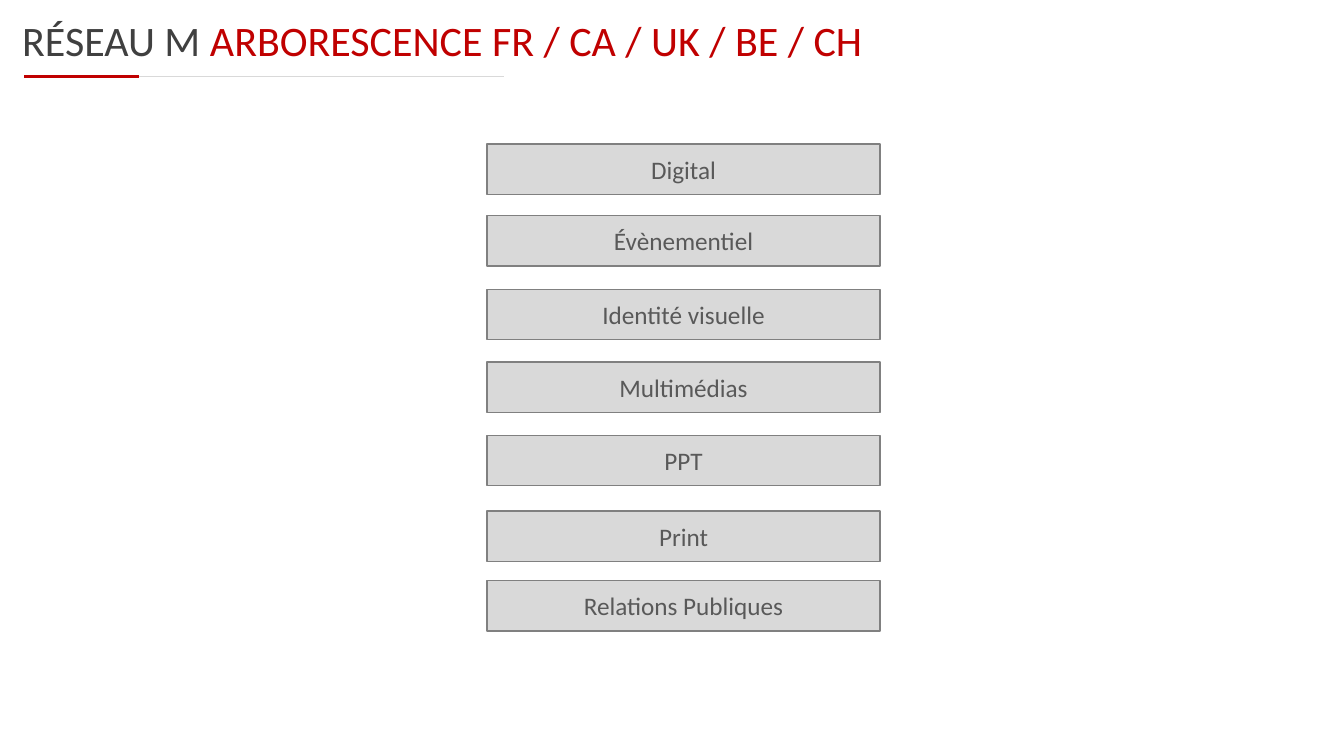
import pptx
import pptx.util
import pptx.dml.color
import pptx.enum.shapes
import pptx.enum.text
import pptx.oxml.ns
import lxml.etree

PX = 9144
COLORS = {
    "red": "C00000",
    "title": "404040",
    "text": "595959",
    "border": "808080",
    "box": "D9D9D9",
}


def rgb(name):
    return pptx.dml.color.RGBColor.from_string(COLORS[name])


prs = pptx.Presentation()
prs.slide_width = 1333 * PX
prs.slide_height = 750 * PX
s = prs.slides.add_slide(prs.slide_layouts[5])

for x1, x2, color, width in [(138, 500, "box", 0.25), (24, 138, "red", 2.5)]:
    rule = s.shapes.add_connector(
        pptx.enum.shapes.MSO_CONNECTOR.STRAIGHT, x1 * PX, 76 * PX, x2 * PX, 76 * PX
    )
    rule.line.color.rgb = rgb(color)
    rule.line.width = pptx.util.Pt(width)
    lxml.etree.SubElement(rule._element.spPr, pptx.oxml.ns.qn("a:effectLst"))

title = s.shapes.title
title.left, title.top, title.width, title.height = 12 * PX, 9 * PX, 1015 * PX, 149 * PX
tf = title.text_frame
tf.word_wrap = True
tf.auto_size = pptx.enum.text.MSO_AUTO_SIZE.NONE
tf.vertical_anchor = pptx.enum.text.MSO_ANCHOR.TOP
p = tf.paragraphs[0]
p.alignment = pptx.enum.text.PP_ALIGN.LEFT
p.font.name = "Calibri"
p.font.size = pptx.util.Pt(30)
for text, color in [
    ("RÉSEAU M ", "title"),
    ("ARBORESCENCE FR / CA / UK / BE / CH", "red"),
]:
    r = p.add_run()
    r.text = text
    r.font.color.rgb = rgb(color)

sections = [
    ("Digital", 143),
    ("Évènementiel", 214),
    ("Identité visuelle", 287),
    ("Multimédias", 359),
    ("PPT", 432),
    ("Print", 507),
    ("Relations Publiques", 576),
]
for label, top in sections:
    sp = s.shapes.add_shape(
        pptx.enum.shapes.MSO_SHAPE.RECTANGLE, 483 * PX, top * PX, 390 * PX, 50 * PX
    )
    sp.shadow.inherit = False
    sp.fill.solid()
    sp.fill.fore_color.rgb = rgb("box")
    sp.line.color.rgb = rgb("border")
    sp.line.width = pptx.util.Pt(1)
    tf = sp.text_frame
    tf.vertical_anchor = pptx.enum.text.MSO_ANCHOR.MIDDLE
    p = tf.paragraphs[0]
    p.text = label
    p.alignment = pptx.enum.text.PP_ALIGN.CENTER
    p.font.name = "Calibri"
    p.font.size = pptx.util.Pt(18)
    p.font.color.rgb = rgb("text")

prs.save("out.pptx")
